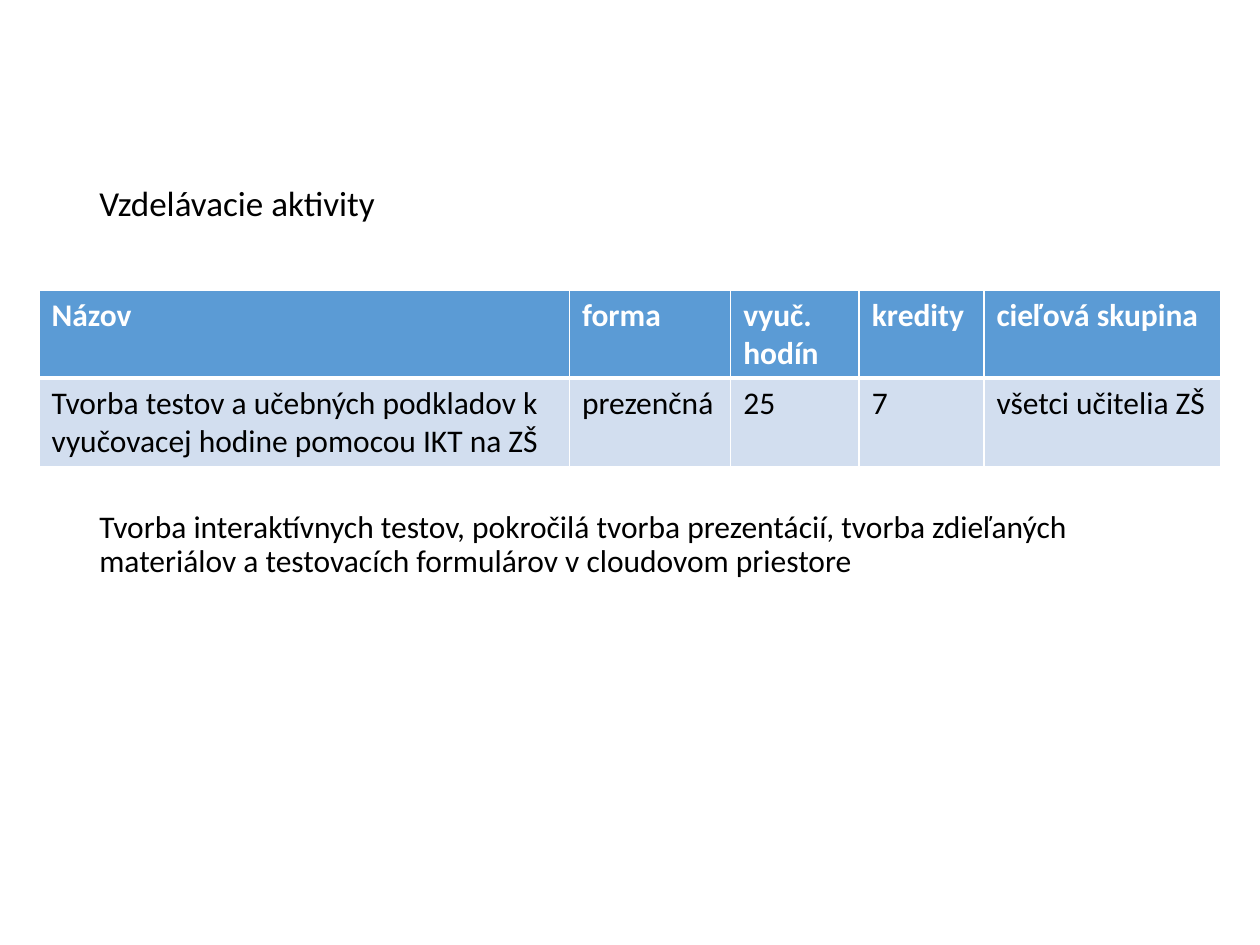
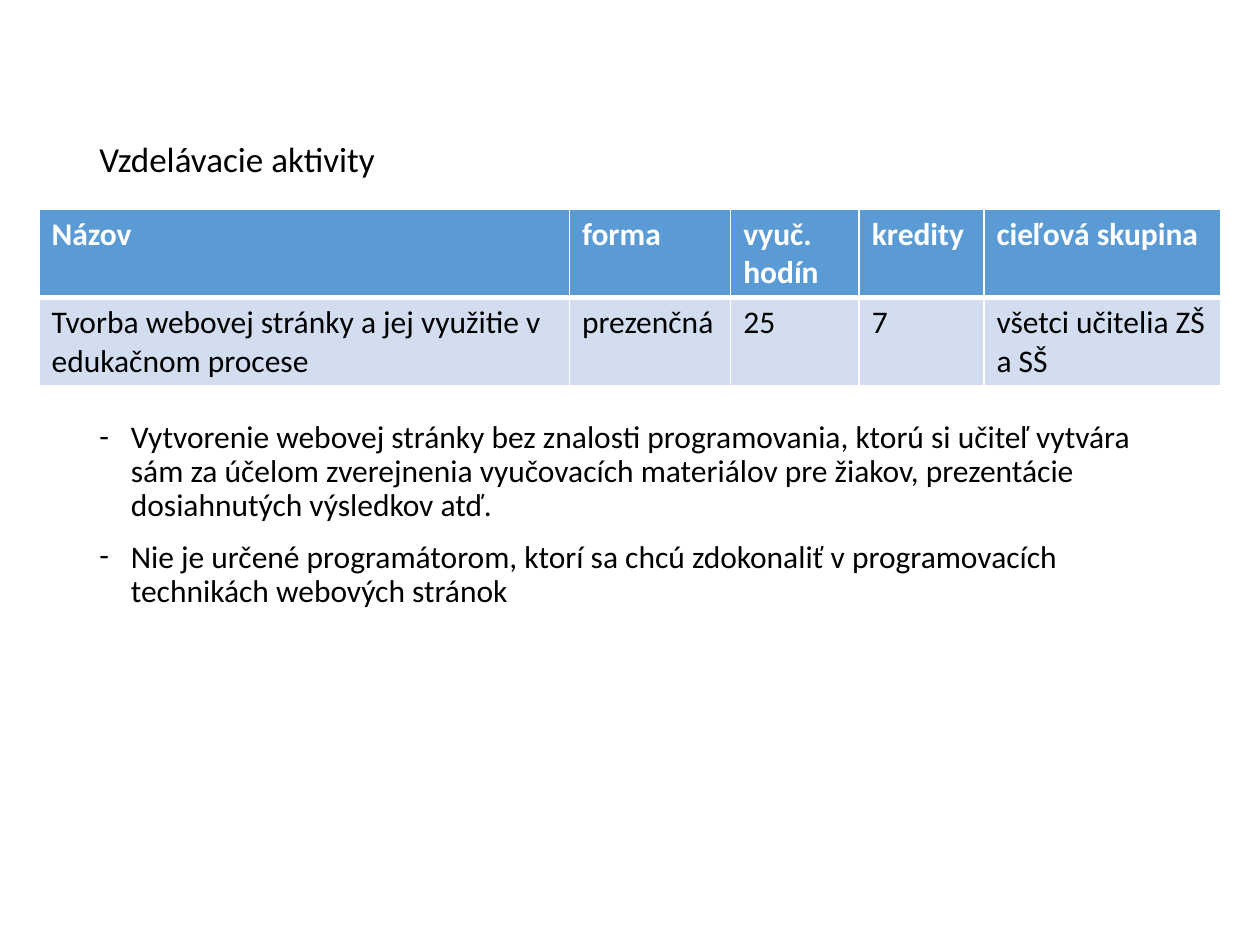
from lxml.etree import SubElement
from pptx import Presentation
from pptx.dml.color import RGBColor
from pptx.oxml.ns import qn
from pptx.util import Inches, Pt

COLORS = {"text": "000000", "white": "FFFFFF", "header": "5B9BD5", "row": "D2DEEF"}
FONT = "Calibri"
TITLE = "Vzdelávacie aktivity"
HEADERS = ["Názov", "forma", "vyuč. hodín", "kredity", "cieľová skupina"]
COLUMN_WIDTHS = [4.21, 1.28, 1.02, 0.99, 1.88]
ROW_HEIGHT = 0.7


def write(p, text, size=18, color="text", bold=False, line=None, before=None):
    p.line_spacing = line
    if before is not None:
        p.space_before = Pt(before)
    r = p.add_run()
    r.text = text
    r.font.name = FONT
    r.font.size = Pt(size)
    r.font.bold = bold
    r.font.color.rgb = RGBColor.from_string(COLORS[color])


def add_dash(p):
    pPr = p._p.get_or_add_pPr()
    pPr.set("marL", str(Inches(0.25)))
    pPr.set("indent", str(Inches(-0.25)))
    SubElement(pPr, qn("a:buFont"), typeface=FONT)
    SubElement(pPr, qn("a:buChar"), char="-")


def add_body(s, top, height, paragraphs, gap, dashed):
    tf = s.shapes.add_textbox(Inches(0.69), Inches(top), Inches(8.62), Inches(height)).text_frame
    tf.word_wrap = True
    write(tf.paragraphs[0], TITLE, size=20, line=0.9)
    for i, text in enumerate(paragraphs):
        p = tf.add_paragraph()
        if dashed:
            add_dash(p)
        write(p, text, line=0.9, before=10 if i else gap)


def add_borders(cell, widths):
    tcPr = cell._tc.get_or_add_tcPr()
    for side, width in widths.items():
        ln = SubElement(tcPr, qn(f"a:ln{side}"), w=str(Pt(width)))
        fill = SubElement(ln, qn("a:solidFill"))
        SubElement(fill, qn("a:srgbClr"), val=COLORS["white"])


def add_course_table(s, top, course):
    rows = [HEADERS, course]
    table = s.shapes.add_table(len(rows), len(HEADERS), Inches(0.31), Inches(top),
                               Inches(sum(COLUMN_WIDTHS)), Inches(ROW_HEIGHT * len(rows))).table
    for column, width in zip(table.columns, COLUMN_WIDTHS):
        column.width = Inches(width)
    for i, row in enumerate(rows):
        is_header = i == 0
        for j, text in enumerate(row):
            cell = table.cell(i, j)
            add_borders(cell, {"L": 1, "R": 1, "T": 1 if is_header else 3, "B": 3 if is_header else 1})
            cell.fill.solid()
            cell.fill.fore_color.rgb = RGBColor.from_string(COLORS["header" if is_header else "row"])
            write(cell.text_frame.paragraphs[0], text,
                  color="white" if is_header else "text", bold=is_header)


def add_course_slide(prs, body_top, body_height, table_top, course, paragraphs, gap, dashed=False):
    s = prs.slides.add_slide(prs.slide_layouts[6])
    add_body(s, body_top, body_height, paragraphs, gap, dashed)
    add_course_table(s, table_top, course)


def main():
    prs = Presentation()
    prs.slide_width, prs.slide_height = Inches(10), Inches(7.5)
    add_course_slide(
        prs, 1.43, 4.92, 2.3,
        ["Tvorba testov a učebných podkladov k vyučovacej hodine pomocou IKT na ZŠ",
         "prezenčná", "25", "7", "všetci učitelia ZŠ"],
        ["Tvorba interaktívnych testov, pokročilá tvorba prezentácií, tvorba zdieľaných "
         "materiálov a testovacích formulárov v cloudovom priestore"],
        gap=164)
    add_course_slide(
        prs, 1.08, 4.5, 1.66,
        ["Tvorba webovej stránky a jej využitie v edukačnom procese",
         "prezenčná", "25", "7", "všetci učitelia ZŠ a SŠ"],
        ["Vytvorenie webovej stránky bez znalosti programovania, ktorú si učiteľ vytvára "
         "sám za účelom zverejnenia vyučovacích materiálov pre žiakov, prezentácie "
         "dosiahnutých výsledkov atď.",
         "Nie je určené programátorom, ktorí sa chcú zdokonaliť v programovacích "
         "technikách webových stránok"],
        gap=138, dashed=True)
    prs.save("out.pptx")


if __name__ == "__main__":
    main()
